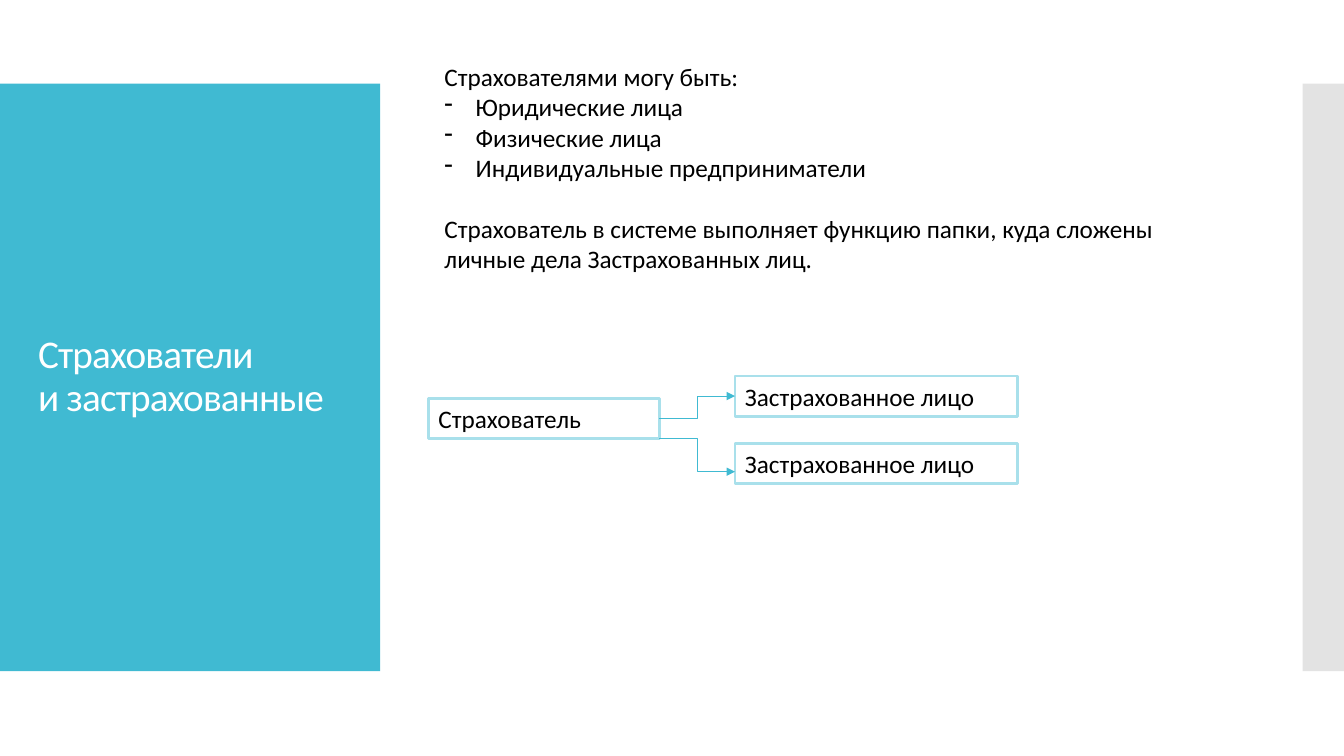
"""Build the slide about insurers and insured persons."""
from dataclasses import dataclass

from lxml import etree
from pptx import Presentation
from pptx.dml.color import RGBColor
from pptx.enum.shapes import MSO_CONNECTOR, MSO_SHAPE
from pptx.enum.text import MSO_ANCHOR, MSO_AUTO_SIZE, PP_ALIGN
from pptx.oxml.ns import qn
from pptx.util import Inches, Pt

RECTANGLE = MSO_SHAPE.RECTANGLE
ELBOW = MSO_CONNECTOR.ELBOW
MIDDLE = MSO_ANCHOR.MIDDLE
TOP = MSO_ANCHOR.TOP
LEFT = PP_ALIGN.LEFT
GROW = MSO_AUTO_SIZE.SHAPE_TO_FIT_TEXT


@dataclass(frozen=True)
class Theme:
    font: str = "Calibri"
    title_size: int = 28
    body_size: int = 18
    accent: RGBColor = RGBColor(0x40, 0xBA, 0xD2)
    border: RGBColor = RGBColor(0xA9, 0xE0, 0xEB)
    gray: RGBColor = RGBColor(0xC8, 0xC8, 0xC8)
    white: RGBColor = RGBColor(0xFF, 0xFF, 0xFF)
    black: RGBColor = RGBColor(0, 0, 0)


theme = Theme()


def add_rectangle(left, top, width, height, fill):
    rectangle = slide.shapes.add_shape(
        RECTANGLE, Inches(left), Inches(top), Inches(width), Inches(height))
    rectangle.shadow.inherit = False
    rectangle.fill.solid()
    rectangle.fill.fore_color.rgb = fill
    rectangle.line.fill.background()
    return rectangle


def style_text(frame, size, color):
    frame.word_wrap = True
    for paragraph in frame.paragraphs:
        paragraph.alignment = LEFT
        for run in paragraph.runs:
            run.font.name = theme.font
            run.font.size = Pt(size)
            run.font.color.rgb = color


presentation = Presentation()
presentation.slide_width = Inches(13.33)
presentation.slide_height = Inches(7.5)
slide = presentation.slides.add_slide(presentation.slide_layouts[6])

add_rectangle(0, 0.83, 3.77, 5.83, theme.accent)
side_strip = add_rectangle(12.92, 0.83, 0.41, 5.83, theme.gray)
strip_color = side_strip.fill._xPr.find(qn("a:solidFill"))[0]
etree.SubElement(strip_color, qn("a:alpha"), val="50000")

title = slide.shapes.add_textbox(Inches(0.28), Inches(1.23), Inches(3.22), Inches(5.03)).text_frame
title.text = "Страхователи\vи застрахованные"
title.vertical_anchor = MIDDLE
title.paragraphs[0].line_spacing = 0.9
style_text(title, theme.title_size, theme.white)
for run in title.paragraphs[0].runs:
    run.font._element.set("spc", "-60")

description = slide.shapes.add_textbox(
    Inches(4.31), Inches(0.56), Inches(7.83), Inches(2.22)).text_frame
description.text = "\n".join([
    "Страхователями могу быть:",
    "Юридические лица",
    "Физические лица",
    "Индивидуальные предприниматели",
    "Страхователь в системе выполняет функцию папки, куда сложены личные дела Застрахованных лиц.",
])
for insurer_kind in description.paragraphs[1:4]:
    properties = insurer_kind._p.get_or_add_pPr()
    properties.set("marL", str(Inches(0.31)))
    properties.set("indent", str(-Inches(0.31)))
    etree.SubElement(properties, qn("a:buChar"), char="-")
description.paragraphs[4].space_before = Pt(22)
style_text(description, theme.body_size, theme.black)
description.auto_size = GROW

for label, left, top, width in [
    ("Страхователь", 4.25, 3.95, 2.29),
    ("Застрахованное лицо", 7.29, 3.73, 2.8),
    ("Застрахованное лицо", 7.29, 4.4, 2.8),
]:
    party = add_rectangle(left, top, width, 0.4, theme.white)
    party.line.color.rgb = theme.border
    party.line.width = Pt(2)
    party.text_frame.text = label
    party.text_frame.vertical_anchor = TOP
    style_text(party.text_frame, theme.body_size, theme.black)
    party.text_frame.auto_size = GROW

for start_y, end_y in [(4.15, 3.93), (4.35, 4.68)]:
    arrow = slide.shapes.add_connector(
        ELBOW, Inches(6.54), Inches(start_y), Inches(7.29), Inches(end_y))
    arrow.line.color.rgb = theme.accent
    arrow.line.width = Pt(0.75)
    etree.SubElement(arrow.line._get_or_add_ln(), qn("a:tailEnd"), type="triangle")
    etree.SubElement(arrow._element.spPr, qn("a:effectLst"))

presentation.save("out.pptx")
